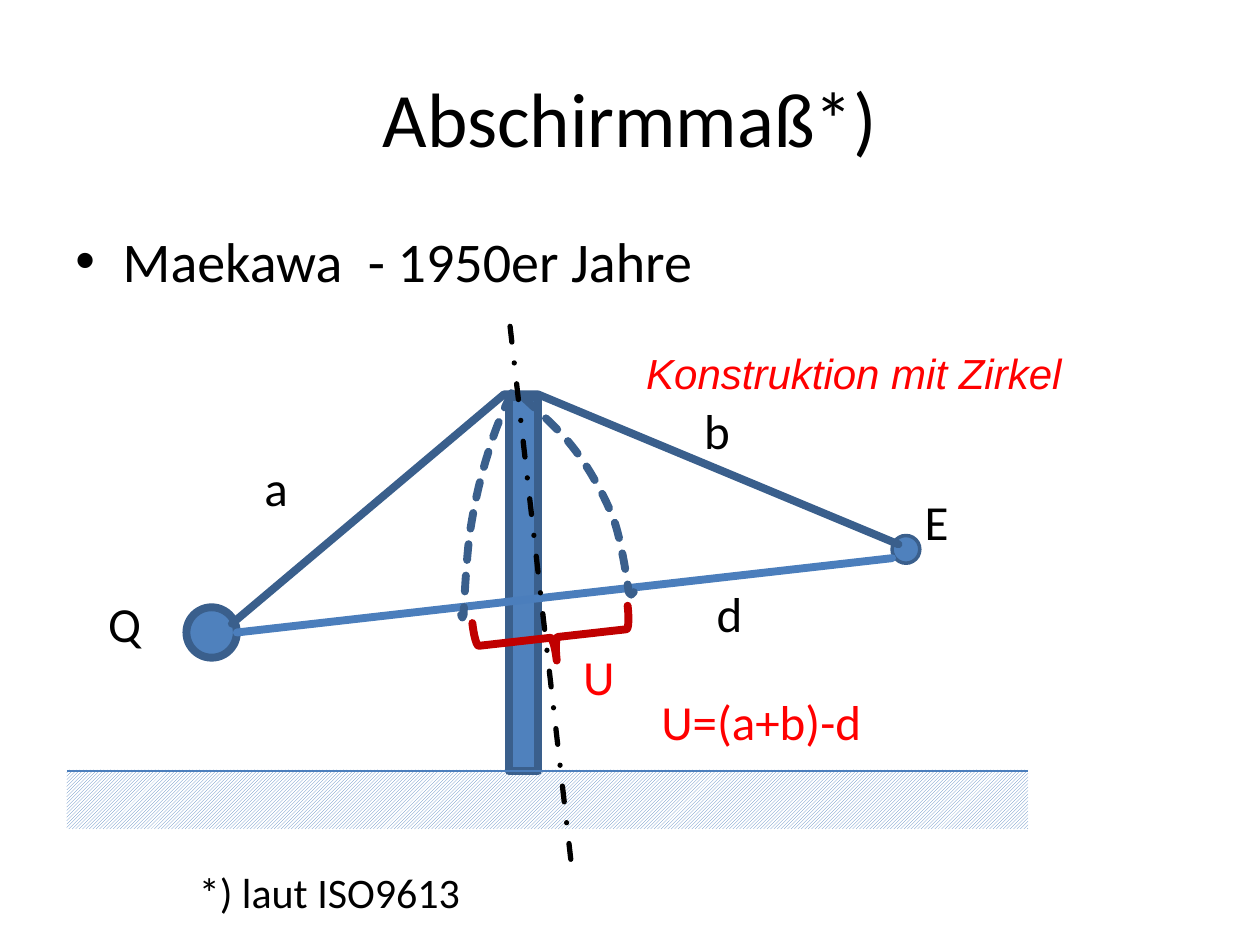
"""Build a slide on the screening measure of a noise barrier."""
from dataclasses import dataclass
from typing import Optional

import lxml.etree
import pptx
import pptx.dml.color
import pptx.enum.dml
import pptx.enum.shapes
import pptx.enum.text
import pptx.oxml.ns
import pptx.util

Point = tuple[float, float]
Box = tuple[float, float, float, float]
Dash = pptx.enum.dml.MSO_LINE
Kind = pptx.enum.shapes.MSO_SHAPE
Align = pptx.enum.text.PP_ALIGN
Anchor = pptx.enum.text.MSO_ANCHOR

COLS, STEPS = 100, 12
BLUE, EDGE, RAY = "4F81BD", "3A5F8C", "4B7EBC"
BLACK, RED, DARK = "000000", "FF0000", "C00000"

deck = pptx.Presentation()
deck.slide_width = pptx.util.Inches(10)
deck.slide_height = pptx.util.Inches(7.5)
slide = deck.slides.add_slide(deck.slide_layouts[6])
CELL = deck.slide_width / COLS


@dataclass
class Label:
    """A text on the grid of square cells."""
    text: str
    box: Box
    color: str = BLACK
    size: float = 28
    face: str = "Calibri"
    slant: bool = False
    space: float = 1.15
    after: float = 10


@dataclass
class Pen:
    """The look of an outline."""
    color: str
    width: float
    dash: Optional[Dash] = None


def grid(*cells: float) -> list[int]:
    """Turn cells into lengths."""
    return [round(cell * CELL) for cell in cells]


def hue(code: str) -> pptx.dml.color.RGBColor:
    """Turn a hex string into a colour."""
    return pptx.dml.color.RGBColor.from_string(code)


def trace(item, pen: Pen, cap: str = "flat") -> None:
    """Style the outline of a shape or connector."""
    item.line.color.rgb = hue(pen.color)
    item.line.width = pptx.util.Pt(pen.width)
    if pen.dash:
        item.line.dash_style = pen.dash
    edge = item.line._get_or_add_ln()
    edge.set("cap", cap)
    lxml.etree.SubElement(edge, pptx.oxml.ns.qn("a:round"))


def solid(kind: Kind, box: Box, pen: Pen):
    """Draw a preset shape with a blue fill."""
    item = slide.shapes.add_shape(kind, *grid(*box))
    item.shadow.inherit = False
    item.fill.solid()
    item.fill.fore_color.rgb = hue(BLUE)
    trace(item, pen)
    return item


def ray(start: Point, end: Point, pen: Pen, cap: str = "rnd") -> None:
    """Draw a straight line."""
    straight = pptx.enum.shapes.MSO_CONNECTOR.STRAIGHT
    item = slide.shapes.add_connector(straight, *grid(*start, *end))
    trace(item, pen, cap)
    lxml.etree.SubElement(item._element.spPr, pptx.oxml.ns.qn("a:effectLst"))


def route(points: list[Point], pen: Pen) -> None:
    """Draw an open outline through points."""
    first, *rest = [tuple(grid(*point)) for point in points]
    maker = slide.shapes.build_freeform(*first)
    maker.add_line_segments(rest, close=False)
    item = maker.convert_to_shape()
    item.shadow.inherit = False
    item.fill.background()
    trace(item, pen, "rnd")


def bend(knots: list[Point]) -> list[Point]:
    """Sample a chain of cubic curves."""
    points = [knots[0]]
    for at in range(0, len(knots) - 1, 3):
        part = knots[at:at + 4]
        for step in range(1, STEPS + 1):
            t = step / STEPS
            rates = ((1 - t) ** 3, 3 * t * (1 - t) ** 2, 3 * t * t * (1 - t), t ** 3)
            points.append(tuple(sum(rate * knot[axis] for rate, knot in zip(rates, part))
                                for axis in (0, 1)))
    return points


def write(label: Label):
    """Place a text box and return it."""
    item = slide.shapes.add_textbox(*grid(*label.box))
    item.text_frame.word_wrap = True
    para = item.text_frame.paragraphs[0]
    para.text = label.text
    para.line_spacing = label.space
    para.space_after = pptx.util.Pt(label.after)
    para.font.name, para.font.size = label.face, pptx.util.Pt(label.size)
    para.font.italic = label.slant
    para.font.color.rgb = hue(label.color)
    return item


def head() -> None:
    """Write the title and the bullet."""
    title = write(Label("Abschirmmaß*)", (5, 3, 90, 12.5), size=44, space=1, after=0))
    title.text_frame.vertical_anchor = Anchor.MIDDLE
    title.text_frame.paragraphs[0].alignment = Align.CENTER
    body = write(Label("Maekawa  - 1950er Jahre", (5, 17.5, 90, 49.5), size=32,
                       space=1, after=0))
    para = body.text_frame.paragraphs[0]
    para.space_before = pptx.util.Pt(6.4)
    props = para._p.get_or_add_pPr()
    indent = grid(3.75)[0]
    props.set("marL", str(indent))
    props.set("indent", str(-indent))
    font = lxml.etree.SubElement(props, pptx.oxml.ns.qn("a:buFont"))
    font.set("typeface", "Arial")
    mark = lxml.etree.SubElement(props, pptx.oxml.ns.qn("a:buChar"))
    mark.set("char", "•")
    props.append(props.find(pptx.oxml.ns.qn("a:defRPr")))


def ground() -> None:
    """Draw the hatched soil."""
    soil = slide.shapes.add_shape(Kind.RECTANGLE, *grid(5.3, 61.1, 76.3, 4.7))
    soil.shadow.inherit = False
    soil.fill.patterned()
    soil.fill.pattern = pptx.enum.dml.MSO_PATTERN.DARK_UPWARD_DIAGONAL
    soil.fill.fore_color.rgb = hue(BLUE)
    soil.fill.back_color.rgb = hue("FFFFFF")
    soil.line.fill.background()


def scene() -> None:
    """Draw the wall, the paths and the arcs."""
    thick, dashed = Pen(EDGE, 4.5), Pen(EDGE, 4.5, Dash.SQUARE_DOT)
    solid(Kind.RECTANGLE, (40.4, 31.5, 2.3, 29.7), thick)
    ray((5.3, 61.2), (81.6, 61.2), Pen(RAY, 0.75), "flat")
    solid(Kind.OVAL, (14.8, 48.2, 4, 4), thick)
    solid(Kind.OVAL, (70.8, 42.5, 2.2, 2.2), Pen(EDGE, 2))
    route([(18.4, 49.5), (40, 31.3), (42.7, 31.3), (71.3, 43.2)], thick)
    ray((18.8, 50.2), (70.8, 44.3), Pen(RAY, 4.5))
    right = [(41.5, 31.5), (43, 32.9), (44.5, 34.2), (45.7, 35.8), (46.9, 37.4),
             (48, 39.4), (48.7, 41.2), (49.4, 43.1), (49.9, 47), (49.9, 47)]
    left = [(40.6, 31.2), (39.9, 32.7), (39.2, 34.3), (38.7, 36.1), (38.1, 38),
            (37.6, 40.2), (37.3, 42.3), (37, 44.4), (36.8, 48.8), (36.8, 48.8)]
    route(bend(right) + [(50.1, 47.2), (50.3, 47)], dashed)
    route(bend(left) + [(36.7, 49), (36.6, 48.8)], dashed)
    brace = slide.shapes.add_shape(Kind.RIGHT_BRACE, *grid(42, 44.4, 3.7, 12.4))
    brace.shadow.inherit = False
    brace.rotation = 83.6
    brace.adjustments[0], brace.adjustments[1] = 0.08, 0.49
    brace.fill.background()
    trace(brace, Pen(DARK, 4.5), "rnd")
    ray((45.3, 68.2), (40.3, 24.3), Pen(BLACK, 3, Dash.DASH_DOT))


LABELS = [
    Label("Q", (7.6, 45.9, 6.7, 6.3)),
    Label("E", (72.4, 37.8, 5.4, 7)),
    Label("U=(a+b)-d", (51.5, 53.7, 22.8, 7), RED),
    Label("a", (20, 35.1, 6.7, 6.3)),
    Label("b", (54.9, 30.6, 6.7, 6.3)),
    Label("d", (55.9, 45.1, 6.7, 6.3)),
    Label("U", (45.3, 50.1, 6.7, 6.3), RED),
    Label("Konstruktion mit Zirkel", (50.3, 26.5, 44.8, 7), RED, 24, "Arial", True),
    Label("*) laut ISO9613", (14.8, 67.7, 44.8, 7), size=24),
]

if __name__ == "__main__":
    ground()
    head()
    scene()
    for label in LABELS:
        write(label)
    deck.save("out.pptx")
